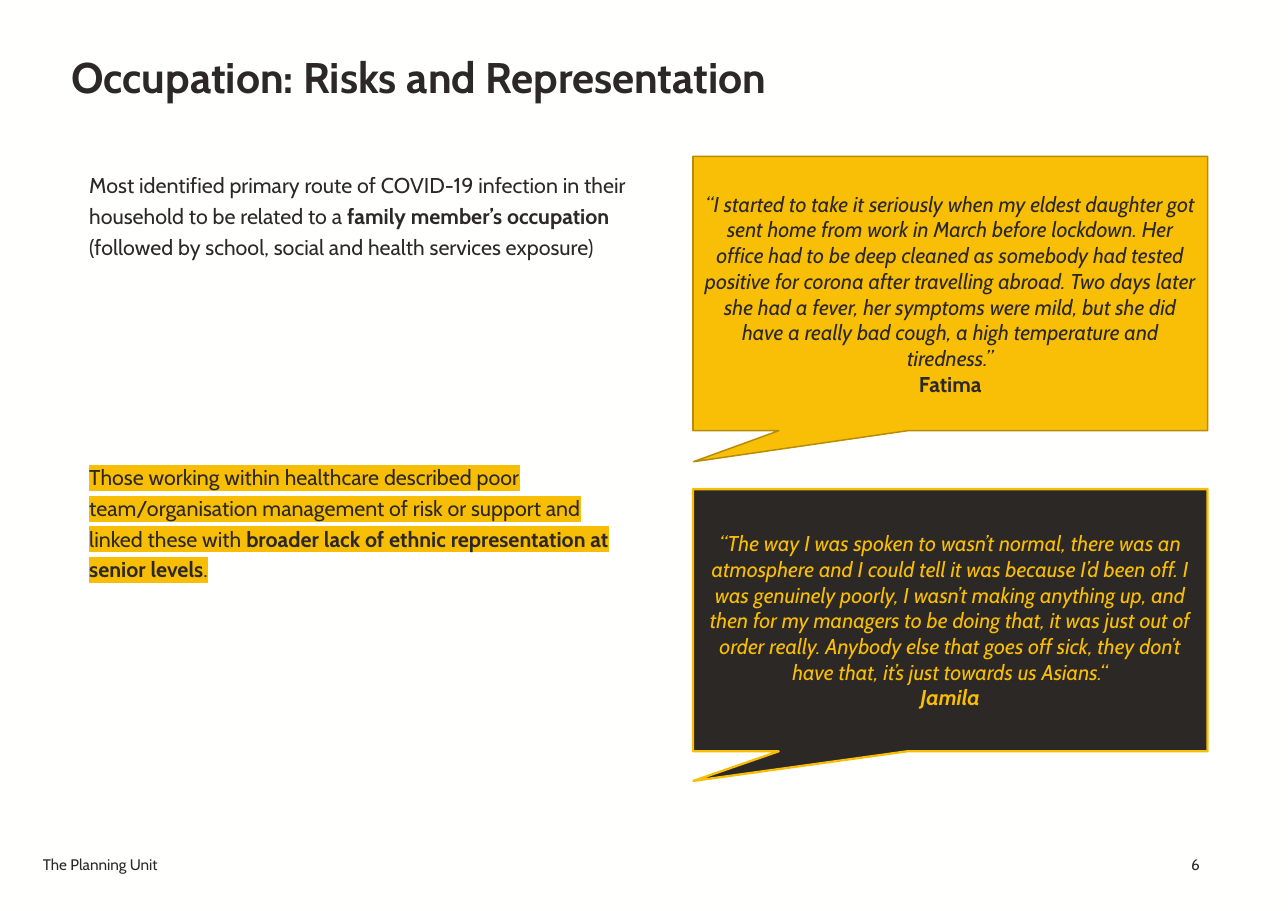
from lxml import etree
from pptx import Presentation
from pptx.dml.color import RGBColor
from pptx.enum.shapes import MSO_SHAPE
from pptx.enum.text import MSO_ANCHOR, PP_ALIGN
from pptx.oxml.ns import qn
from pptx.util import Inches, Pt

PAPER = RGBColor(0xFF, 0xFF, 0xFE)
INK = RGBColor(0x2C, 0x28, 0x25)
AMBER = RGBColor(0xF9, 0xBF, 0x07)
BRIGHT = RGBColor(0xF8, 0xBE, 0x05)
OCHRE = RGBColor(0xB8, 0x8D, 0x05)


def write(para, spans, size, color=INK, align=PP_ALIGN.LEFT, bold=None, italic=None):
    """Fill a paragraph with (text, bold) spans in one style."""
    para.alignment = align
    para.font.name = "Cabin"
    para.font.size = Pt(size)
    para.font.color.rgb = color
    para.font.bold = bold
    para.font.italic = italic
    for text, strong in spans:
        span = para.add_run()
        span.text = text
        if strong:
            span.font.bold = True


def add_text_box(page, left, top, width, height, anchor=MSO_ANCHOR.TOP):
    """Add a wrapping text box with even margins and return its frame."""
    box = page.shapes.add_textbox(Inches(left), Inches(top), Inches(width), Inches(height))
    frame = box.text_frame
    frame.word_wrap = True
    frame.vertical_anchor = anchor
    frame.margin_left = frame.margin_right = Inches(0.08)
    frame.margin_top = frame.margin_bottom = Inches(0.08)
    return frame


deck = Presentation()
deck.slide_width = Inches(11.69)
deck.slide_height = Inches(8.27)
page = deck.slides.add_slide(deck.slide_layouts[6])
page.background.fill.solid()
page.background.fill.fore_color.rgb = PAPER

# Title
title = add_text_box(page, 0.57, 0.22, 10.24, 0.79, MSO_ANCHOR.BOTTOM)
write(title.paragraphs[0], [("Occupation: Risks and Representation", False)], 28, bold=True)

# Findings
findings = add_text_box(page, 0.73, 1.44, 5.12, 6.03)
route = findings.paragraphs[0]
write(route, [
    ("Most identified primary route of COVID-19 infection in their household to be related to a ", False),
    ("family member’s occupation ", True),
    ("(followed by school, social and health services exposure)", False),
], 14)
workplace = findings.add_paragraph()
write(workplace, [
    ("Those working within the care described poor team/organisation management of risk or support "
     "and linked these with ".replace("the care", "healthcare"), False),
    ("broader lack of ethnic representation at senior levels", True),
    (".", False),
], 14)
route.line_spacing = workplace.line_spacing = 1.2
workplace.space_before = Pt(130)

# Highlight on the second finding
for span in workplace.runs:
    highlight = etree.SubElement(span._r.get_or_add_rPr(), qn("a:highlight"))
    etree.SubElement(highlight, qn("a:srgbClr"), val=str(BRIGHT))

# Quotes: top, height, fill, line, line width, text colour, words, speaker, speaker italic
quotes = [
    (1.42, 2.49, AMBER, OCHRE, 1, INK,
     "“I started to take it seriously when my eldest daughter got sent home from work in March "
     "before lockdown. Her office had to be deep cleaned as somebody had tested positive for corona "
     "after travelling abroad. Two days later she had a fever, her symptoms were mild, but she did "
     "have a really bad cough, a high temperature and tiredness.”",
     "Fatima", False),
    (4.44, 2.38, INK, BRIGHT, 1.5, BRIGHT,
     "“The way I was spoken to wasn’t normal, there was an atmosphere and I could tell it was "
     "because I’d been off. I was genuinely poorly, I wasn’t making anything up, and then for my "
     "managers to be doing that, it was just out of order really. Anybody else that goes off sick, "
     "they don’t have that, it’s just towards us Asians.“",
     "Jamila", True),
]
for top, height, fill, line, weight, color, words, speaker, slanted in quotes:
    callout = page.shapes.add_shape(
        MSO_SHAPE.RECTANGULAR_CALLOUT, Inches(6.29), Inches(top), Inches(4.67), Inches(height))
    callout.adjustments[0] = -0.499
    callout.adjustments[1] = 0.613
    callout.shadow.inherit = False
    callout.fill.solid()
    callout.fill.fore_color.rgb = fill
    callout.line.color.rgb = line
    callout.line.width = Pt(weight)
    frame = callout.text_frame
    frame.word_wrap = True
    frame.vertical_anchor = MSO_ANCHOR.MIDDLE
    write(frame.paragraphs[0], [(words, False)], 14, color, PP_ALIGN.CENTER, italic=True)
    write(frame.add_paragraph(), [(speaker, False)], 14, color, PP_ALIGN.CENTER,
          bold=True, italic=slanted)

# Footer
for left, width, text, align in [
    (0.31, 1.28, "The Planning Unit", PP_ALIGN.LEFT),
    (10.18, 0.79, "6", PP_ALIGN.RIGHT),
]:
    footer = add_text_box(page, left, 7.68, width, 0.4)
    write(footer.paragraphs[0], [(text, False)], 10, align=align)

deck.save("out.pptx")
